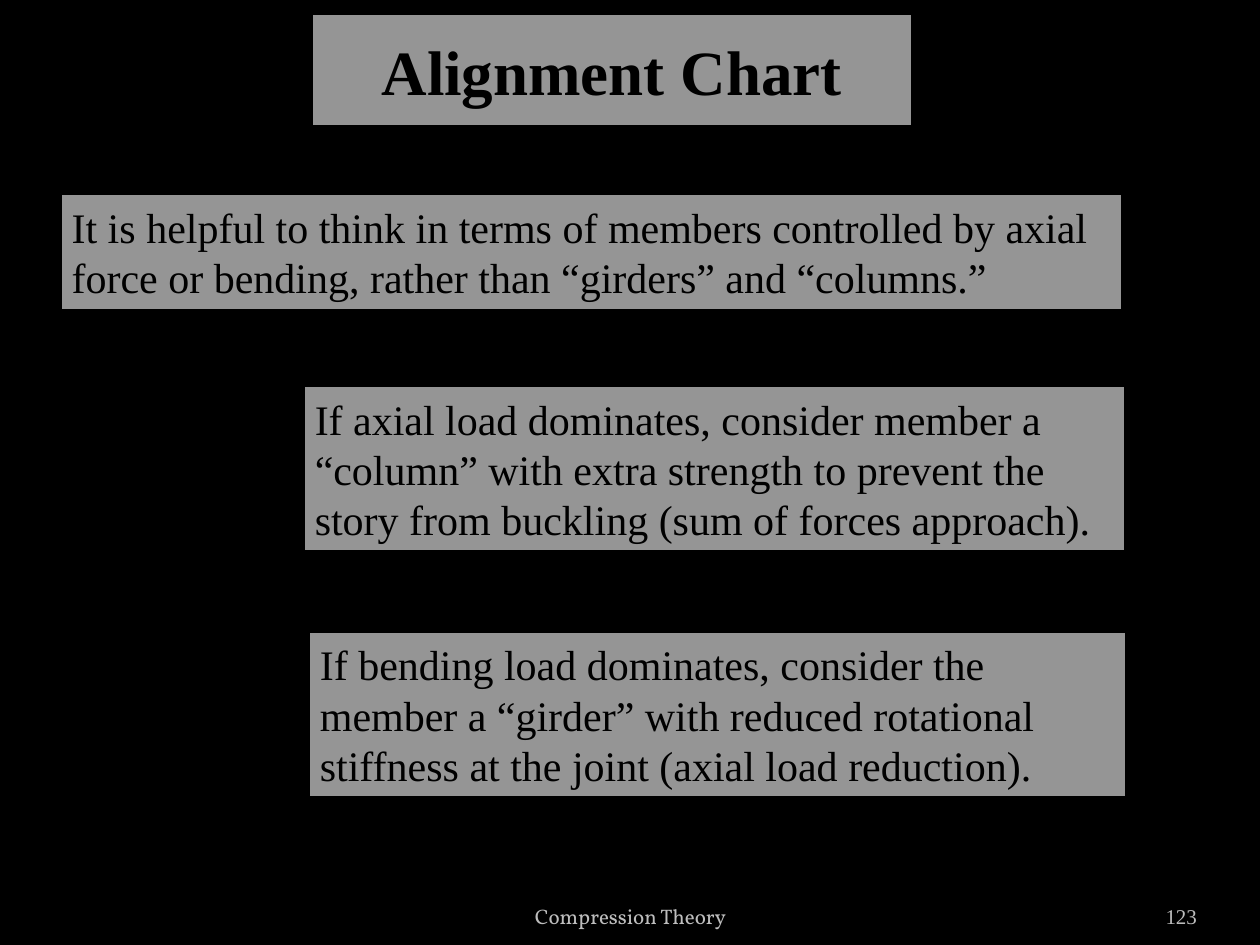
from lxml import etree
from pptx import Presentation
from pptx import util as u
from pptx.dml.color import RGBColor
from pptx.enum import shapes, text
from pptx.oxml import ns

BLACK = RGBColor(0x00, 0x00, 0x00)
PANEL = RGBColor(0xF2, 0xF2, 0xF2)
FOOTER_GRAY = RGBColor(0xBD, 0xBD, 0xBD)
NUMBER_GRAY = RGBColor(0xBC, 0xBC, 0xBC)
SERIF = "Times New Roman"
PANEL_OPACITY = 62

STATEMENTS = [
    ((2.44, 5, 6.51, 1.34),
     "If bending load dominates, consider the member a “girder” with reduced "
     "rotational stiffness at the joint (axial load reduction)."),
    ((2.4, 3.05, 6.54, 1.34),
     "If axial load dominates, consider member a “column” with extra strength "
     "to prevent the story from buckling (sum of forces approach)."),
    ((0.47, 1.53, 8.45, 0.94),
     "It is helpful to think in terms of members controlled by axial force or "
     "bending, rather than “girders” and “columns.”"),
]


def apply(target, formats):
    for name, value in formats.items():
        setattr(target, name, value)


def inches(area):
    return [u.Inches(value) for value in area]


def write(box, wording, align, anchor, color, size, name=SERIF, bold=False):
    frame = box.text_frame
    apply(frame, {"word_wrap": True, "vertical_anchor": anchor})
    para = frame.paragraphs[0]
    para.alignment = align
    span = para.add_run()
    span.text = wording
    apply(span.font, {"name": name, "size": u.Pt(size), "bold": bold})
    span.font.color.rgb = color


def style_panel(box):
    box.fill.solid()
    box.fill.fore_color.rgb = PANEL
    color = box.fill._xPr.find(ns.qn("a:solidFill"))[0]
    etree.SubElement(color, ns.qn("a:alpha"), val=str(PANEL_OPACITY * 1000))
    box.line.color.rgb = BLACK
    box.line.width = u.Pt(3)


def add_statement(page, area, wording):
    box = page.shapes.add_shape(shapes.MSO_SHAPE.RECTANGLE, *inches(area))
    box.shadow.inherit = False
    style_panel(box)
    write(box, wording, text.PP_ALIGN.LEFT, text.MSO_ANCHOR.MIDDLE, BLACK, 24)
    box.text_frame.auto_size = text.MSO_AUTO_SIZE.SHAPE_TO_FIT_TEXT


def add_title(page, area, wording):
    title = page.shapes.title
    apply(title, dict(zip(("left", "top", "width", "height"), inches(area))))
    style_panel(title)
    write(title, wording, text.PP_ALIGN.CENTER, text.MSO_ANCHOR.MIDDLE,
          BLACK, 36, bold=True)
    title.text_frame.auto_size = text.MSO_AUTO_SIZE.NONE


def add_footer(page, area, wording, align, color, name, side_inset):
    box = page.shapes.add_textbox(*inches(area))
    write(box, wording, align, text.MSO_ANCHOR.BOTTOM, color, 12, name)
    inset = u.Inches(side_inset)
    apply(box.text_frame, {"margin_left": inset, "margin_right": inset})


def main():
    deck = Presentation()
    apply(deck, {"slide_width": u.Inches(10), "slide_height": u.Inches(7.5)})
    page = deck.slides.add_slide(deck.slide_layouts.get_by_name("Title Only"))
    page.background.fill.solid()
    page.background.fill.fore_color.rgb = BLACK
    for area, wording in STATEMENTS:
        add_statement(page, area, wording)
    add_footer(page, (8.67, 7.02, 0.83, 0.4), "123",
               text.PP_ALIGN.RIGHT, NUMBER_GRAY, SERIF, 0)
    add_footer(page, (3.42, 7.02, 3.17, 0.4), "Compression Theory",
               text.PP_ALIGN.CENTER, FOOTER_GRAY, "Vollkorn", 0.1)
    add_title(page, (2.46, 0.1, 4.79, 0.91), "Alignment Chart")
    deck.save("out.pptx")


if __name__ == "__main__":
    main()
